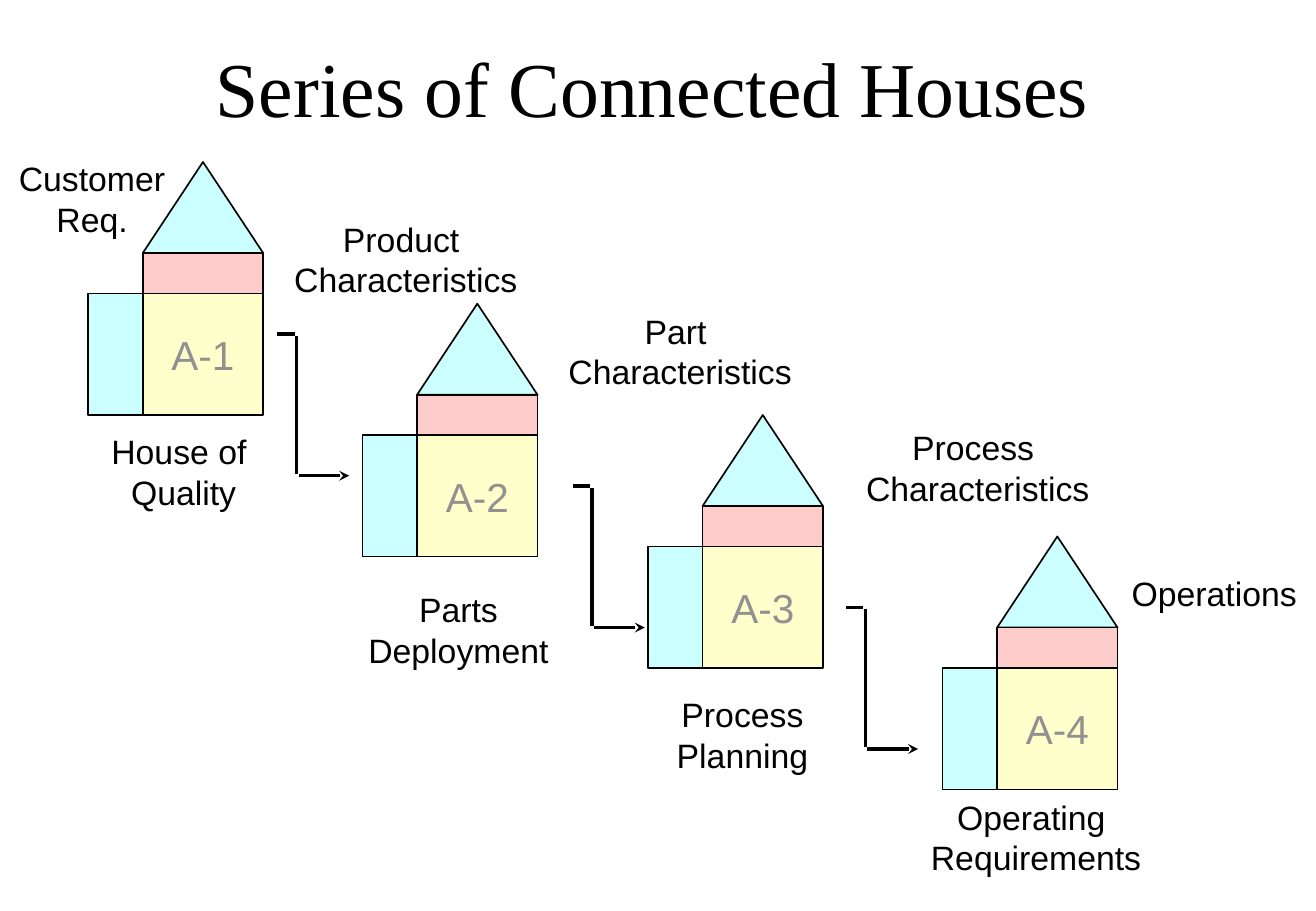
import dataclasses

import lxml.etree
import pptx
import pptx.dml.color
import pptx.enum.shapes
import pptx.enum.text
import pptx.oxml.ns
import pptx.util

PX = 7620
SHAPE = pptx.enum.shapes.MSO_SHAPE
ALIGN = pptx.enum.text.PP_ALIGN


@dataclasses.dataclass(frozen=True)
class Theme:
    """Hold the colours, fonts and type sizes of the slide."""
    ink: str = "000000"
    muted: str = "919191"
    blue: str = "CCFFFF"
    pink: str = "FFCCCC"
    yellow: str = "FFFFCC"
    title_font: str = "Times New Roman"
    body_font: str = "Arial"
    title_size: int = 46
    house_size: int = 24
    label_size: int = 20
    outline: int = 1
    arrow: int = 2


THEME = Theme()
HOUSE_SIZE = (173, 250)
HOUSES = [("A-1", 87, 160), ("A-2", 358, 300), ("A-3", 640, 410), ("A-4", 931, 530)]
ARROW_SIZE = (71, 140)
ARROWS = [(274, 330), (566, 480), (836, 600)]
LABELS = [
    ("Customer\nReq.", (0, 150, 182, 91)),
    ("Product \nCharacteristics", (269, 210, 264, 91)),
    ("Part \nCharacteristics", (540, 301, 264, 91)),
    ("Process \nCharacteristics", (834, 416, 264, 91)),
    ("Operations", (1098, 560, 203, 52)),
    ("House of \nQuality", (76, 420, 211, 91)),
    ("Parts\nDeployment", (344, 576, 218, 91)),
    ("Process\nPlanning", (650, 680, 167, 91)),
    ("Operating \nRequirements", (898, 781, 251, 91)),
]


def emu(box):
    """Turn px lengths into EMU."""
    return [pptx.util.Emu(length * PX) for length in box]


def rgb(colour):
    """Make a colour from its hex digits."""
    return pptx.dml.color.RGBColor.from_string(colour)


def write(frame, text, font, size, colour, align=ALIGN.CENTER):
    """Fill a text frame with formatted paragraphs."""
    frame.text = text
    for para in frame.paragraphs:
        para.alignment = align
        for span in para.runs:
            span.font.name = font
            span.font.size = pptx.util.Pt(size)
            span.font.color.rgb = rgb(colour)


def add_title(page, box, text):
    """Place the title placeholder in its box."""
    title = page.shapes.title
    title.left, title.top, title.width, title.height = emu(box)
    write(title.text_frame, text, THEME.title_font, THEME.title_size, THEME.ink)
    title.text_frame.vertical_anchor = pptx.enum.text.MSO_ANCHOR.MIDDLE


def add_part(page, kind, box, fill):
    """Add one outlined part of a house."""
    part = page.shapes.add_shape(kind, *emu(box))
    part.shadow.inherit = False
    part.fill.solid()
    part.fill.fore_color.rgb = rgb(fill)
    part.line.color.rgb = rgb(THEME.ink)
    part.line.width = pptx.util.Pt(THEME.outline)
    return part


def add_house(page, box, name):
    """Build a house with roof, beam, side wing and named hall."""
    left, top, width, height = box
    wing, roof, beam = 54, 90, 40
    hall_left, hall_width = left + wing, width - wing
    hall_top, hall_height = top + roof + beam, height - roof - beam
    hall = add_part(page, SHAPE.RECTANGLE, (hall_left, hall_top, hall_width, hall_height), THEME.yellow)
    add_part(page, SHAPE.RECTANGLE, (left, hall_top, wing, hall_height), THEME.blue)
    add_part(page, SHAPE.ISOSCELES_TRIANGLE, (hall_left, top, hall_width, roof), THEME.blue)
    add_part(page, SHAPE.RECTANGLE, (hall_left, top + roof, hall_width, beam), THEME.pink)
    write(hall.text_frame, name, THEME.body_font, THEME.house_size, THEME.muted)
    hall.text_frame.word_wrap = False


def add_line(page, start, end, head=False):
    """Draw a straight line, with an arrowhead at its end if asked."""
    line = page.shapes.add_connector(
        pptx.enum.shapes.MSO_CONNECTOR.STRAIGHT, *emu(start + end))
    line.line.color.rgb = rgb(THEME.ink)
    line.line.width = pptx.util.Pt(THEME.arrow)
    if head:
        outline = line.line._get_or_add_ln()
        lxml.etree.SubElement(outline, pptx.oxml.ns.qn("a:tailEnd"), type="stealth")
    lxml.etree.SubElement(line._element.spPr, pptx.oxml.ns.qn("a:effectLst"))


def add_step_arrow(page, box):
    """Draw a stepped arrow from the top left to the bottom right of its box."""
    left, top, width, height = box
    bend, gap = left + 19, 2
    right, bottom = left + width, top + height
    add_line(page, (left, top), (bend - gap, top))
    add_line(page, (bend, top + gap), (bend, bottom - gap))
    add_line(page, (bend + gap, bottom), (right, bottom), head=True)


def add_label(page, box, text):
    """Add a centred label in its box."""
    label = page.shapes.add_textbox(*emu(box))
    write(label.text_frame, text, THEME.body_font, THEME.label_size, THEME.ink)
    label.text_frame.word_wrap = True


def add_houses_slide(deck):
    """Compose the slide of connected houses."""
    page = deck.slides.add_slide(deck.slide_layouts[5])
    add_title(page, (43, 0, 1202, 170), "Series of Connected Houses")
    for name, left, top in HOUSES:
        add_house(page, (left, top, *HOUSE_SIZE), name)
    for corner in ARROWS:
        add_step_arrow(page, corner + ARROW_SIZE)
    for text, box in LABELS:
        add_label(page, box, text)


def main():
    """Create and save the deck."""
    deck = pptx.Presentation()
    deck.slide_width, deck.slide_height = emu((1300, 900))
    add_houses_slide(deck)
    deck.save("out.pptx")


if __name__ == "__main__":
    main()
